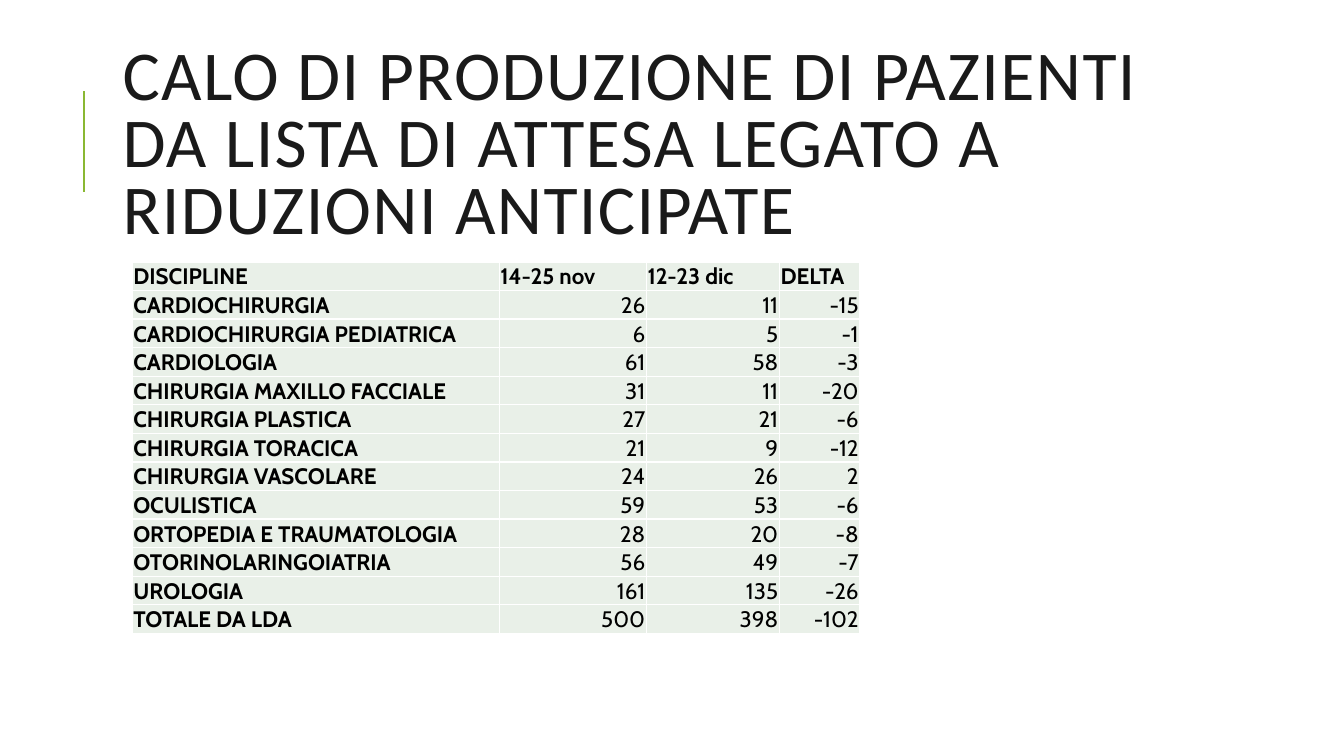
from dataclasses import dataclass

from lxml import etree
from pptx import Presentation, util as u
from pptx.dml.color import RGBColor
from pptx.enum import shapes, text
from pptx.oxml import ns


@dataclass(frozen=True)
class Theme:
    title_font: str = "Calibri"
    table_font: str = "Cabin"
    title_size: u.Pt = u.Pt(50)
    table_size: u.Pt = u.Pt(16)
    title_ink: str = "1A1A1A"
    table_ink: str = "000000"
    accent: str = "8AB833"
    cell_fill: str = "E9F0E8"
    cell_border: str = "FFFFFF"


@dataclass(frozen=True)
class Discipline:
    name: str
    november: int
    december: int

    @property
    def cells(self) -> list[str]:
        delta = self.december - self.november
        return [self.name, str(self.november), str(self.december), str(delta)]


THEME = Theme()
TITLE = "CALO DI PRODUZIONE DI PAZIENTI DA LISTA DI ATTESA LEGATO A RIDUZIONI ANTICIPATE"
HEADINGS = ["DISCIPLINE", "14-25 nov", "12-23 dic", "DELTA"]
COLUMN_WIDTHS = [u.Cm(9.25), u.Cm(3.71), u.Cm(3.35), u.Cm(2.03)]
ROW_HEIGHT = u.Cm(0.72)
DISCIPLINES = [
    Discipline("CARDIOCHIRURGIA", 26, 11),
    Discipline("CARDIOCHIRURGIA PEDIATRICA", 6, 5),
    Discipline("CARDIOLOGIA", 61, 58),
    Discipline("CHIRURGIA MAXILLO FACCIALE", 31, 11),
    Discipline("CHIRURGIA PLASTICA", 27, 21),
    Discipline("CHIRURGIA TORACICA", 21, 9),
    Discipline("CHIRURGIA VASCOLARE", 24, 26),
    Discipline("OCULISTICA", 59, 53),
    Discipline("ORTOPEDIA E TRAUMATOLOGIA", 28, 20),
    Discipline("OTORINOLARINGOIATRIA", 56, 49),
    Discipline("UROLOGIA", 161, 135),
]
TOTAL = Discipline(
    "TOTALE DA LDA",
    sum(d.november for d in DISCIPLINES),
    sum(d.december for d in DISCIPLINES),
)


def add_run(paragraph, wording: str, font: str, size: u.Pt, ink: str, bold: bool = False):
    run = paragraph.add_run()
    run.text = wording
    run.font.name = font
    run.font.size = size
    run.font.bold = bold
    run.font.color.rgb = RGBColor.from_string(ink)
    return run


def draw_accent(slide) -> None:
    accent = slide.shapes.add_connector(
        shapes.MSO_CONNECTOR.STRAIGHT, u.Cm(2.12), u.Cm(4.83), u.Cm(2.12), u.Cm(2.29)
    )
    accent.line.color.rgb = RGBColor.from_string(THEME.accent)
    accent.line.width = u.Pt(1.5)
    etree.SubElement(accent._element.spPr, ns.qn("a:effectLst"))


def draw_title(slide) -> None:
    title = slide.shapes.add_textbox(u.Cm(2.84), u.Cm(1.63), u.Cm(27), u.Cm(4.17))
    frame = title.text_frame
    frame.word_wrap = True
    frame.vertical_anchor = text.MSO_ANCHOR.MIDDLE
    paragraph = frame.paragraphs[0]
    paragraph.line_spacing = 0.8
    run = add_run(paragraph, TITLE, THEME.title_font, THEME.title_size, THEME.title_ink)
    run.font._element.set("spc", "100")


def add_borders(cell) -> None:
    """Draw all four sides; must come before the fill to keep the XML order."""
    properties = cell._tc.get_or_add_tcPr()
    for side in ("lnL", "lnR", "lnT", "lnB"):
        border = etree.SubElement(properties, ns.qn(f"a:{side}"), w=str(u.Pt(1)))
        solid = etree.SubElement(border, ns.qn("a:solidFill"))
        etree.SubElement(solid, ns.qn("a:srgbClr"), val=THEME.cell_border)


def fill_cell(cell, wording: str, bold: bool, align: text.PP_ALIGN) -> None:
    add_borders(cell)
    cell.fill.solid()
    cell.fill.fore_color.rgb = RGBColor.from_string(THEME.cell_fill)
    cell.margin_left = cell.margin_right = cell.margin_top = u.Cm(0.03)
    cell.margin_bottom = 0
    cell.vertical_anchor = text.MSO_ANCHOR.BOTTOM
    paragraph = cell.text_frame.paragraphs[0]
    paragraph.alignment = align
    add_run(paragraph, wording, THEME.table_font, THEME.table_size, THEME.table_ink, bold)


def draw_table(slide) -> None:
    rows = [HEADINGS] + [d.cells for d in [*DISCIPLINES, TOTAL]]
    table = slide.shapes.add_table(
        len(rows), len(HEADINGS), u.Cm(3.33), u.Cm(6.6),
        sum(COLUMN_WIDTHS), ROW_HEIGHT * len(rows),
    ).table
    table.first_row = table.horz_banding = False
    for column, width in zip(table.columns, COLUMN_WIDTHS):
        column.width = width
    for r, wordings in enumerate(rows):
        table.rows[r].height = ROW_HEIGHT
        for c, wording in enumerate(wordings):
            is_label = r == 0 or c == 0
            align = text.PP_ALIGN.LEFT if is_label else text.PP_ALIGN.RIGHT
            fill_cell(table.cell(r, c), wording, is_label, align)


def main() -> None:
    deck = Presentation()
    deck.slide_width, deck.slide_height = u.Cm(33.87), u.Cm(19.05)
    slide = deck.slides.add_slide(deck.slide_layouts[6])
    draw_accent(slide)
    draw_title(slide)
    draw_table(slide)
    deck.save("out.pptx")


if __name__ == "__main__":
    main()
